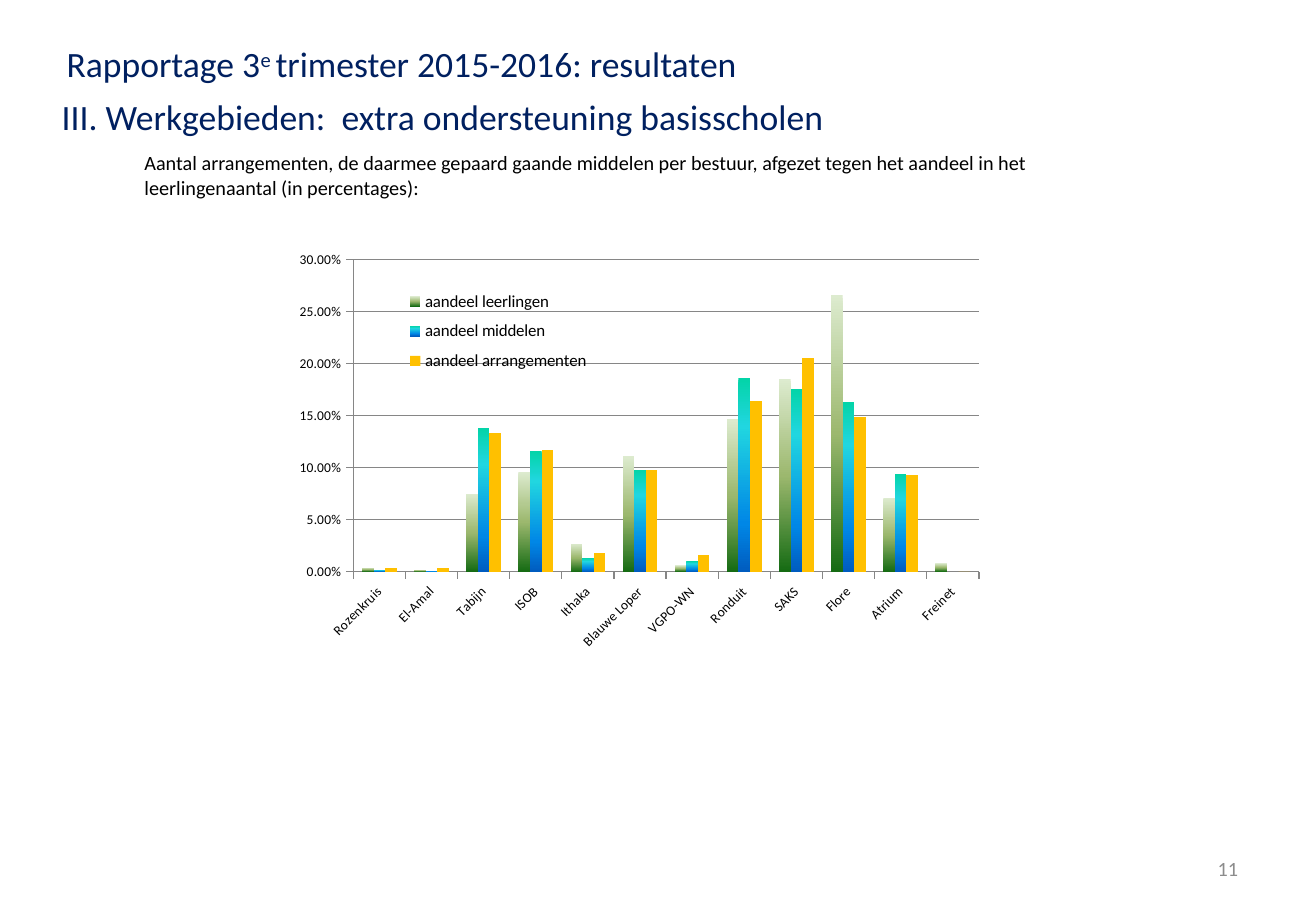
"""Build the slide on extra support per school board, with a clustered column chart."""
from lxml import etree
from pptx import Presentation
from pptx import util as u
from pptx.chart.data import CategoryChartData
from pptx.dml.color import RGBColor
from pptx.enum import chart as ch, text
from pptx.oxml import ns

NAVY = RGBColor(0x00, 0x20, 0x60)
BLACK = RGBColor(0x00, 0x00, 0x00)
GREY = RGBColor(0x8C, 0x8C, 0x8C)
AXIS_GREY = RGBColor(0x86, 0x86, 0x86)
AMBER = RGBColor(0xFF, 0xC0, 0x00)
GREENS = [(0, RGBColor(0xDD, 0xEB, 0xCF)), (50, RGBColor(0x9C, 0xB8, 0x6E)),
          (100, RGBColor(0x15, 0x6B, 0x13))]
BLUES = [(0, RGBColor(0x03, 0xD4, 0xA8)), (25, RGBColor(0x21, 0xD6, 0xE0)),
         (75, RGBColor(0x00, 0x87, 0xE6)), (100, RGBColor(0x00, 0x5C, 0xBF))]
FONT = "Calibri"

LEFT, RIGHT = text.PP_ALIGN.LEFT, text.PP_ALIGN.RIGHT
TOP, MIDDLE = text.MSO_ANCHOR.TOP, text.MSO_ANCHOR.MIDDLE
TEXTS = [
    ((32.4, 21.6, 572.4, 33.1), 21.1, NAVY, LEFT, TOP,
     [("Rapportage 3", 0), ("e ", 30), ("trimester 2015-2016: resultaten", 0)]),
    ((29.5, 52.6, 672.5, 33.1), 21.1, NAVY, LEFT, TOP,
     [("III. Werkgebieden:  extra ondersteuning basisscholen", 0)]),
    ((78.5, 85.7, 601.2, 36), 12, BLACK, LEFT, TOP,
     [("Aantal arrangementen, de daarmee gepaard gaande middelen per bestuur, "
       "afgezet tegen het aandeel in het leerlingenaantal (in percentages):", 0)]),
    ((558.7, 500.4, 182.2, 28.8), 12, GREY, RIGHT, MIDDLE, [("11", 0)]),
]

BOARDS = ["Rozenkruis", "El-Amal", "Tabijn", "ISOB", "Ithaka", "Blauwe Loper",
          "VGPO-WN", "Ronduit", "SAKS", "Flore", "Atrium", "Freinet"]
SHARES = [
    ("aandeel leerlingen", GREENS, [0.004, 0.002, 0.075, 0.096, 0.027, 0.111,
                                    0.006, 0.147, 0.185, 0.266, 0.071, 0.008]),
    ("aandeel middelen", BLUES, [0.002, 0.001, 0.138, 0.116, 0.013, 0.098,
                                 0.01, 0.186, 0.176, 0.163, 0.094, 0]),
    ("aandeel arrangementen", AMBER, [0.004, 0.004, 0.133, 0.117, 0.018, 0.098,
                                      0.016, 0.164, 0.205, 0.149, 0.093, 0]),
]
CHART_AREA = (164.2, 141.1, 452.2, 257)
PLOT_LAYOUT = (0.1, 0.05, 0.82, 0.72)
LEGEND_LAYOUT = (0.13, 0.1, 0.32, 0.23)


def points(values):
    return [u.Pt(value) for value in values]


def style_font(font, size, color):
    font.name, font.size, font.color.rgb = FONT, u.Pt(size), color


def add_text(page, area, size, color, align, anchor, spans):
    frame = page.shapes.add_textbox(*points(area)).text_frame
    frame.word_wrap, frame.vertical_anchor = True, anchor
    para = frame.paragraphs[0]
    para.alignment = align
    for words, raised in spans:
        span = para.add_run()
        span.text = words
        style_font(span.font, size, color)
        if raised:
            span.font._element.set("baseline", str(raised * 1000))


def set_layout(parent, position, layout, inner=False):
    for old in parent.findall(ns.qn("c:layout")):
        parent.remove(old)
    node = etree.Element(ns.qn("c:layout"))
    manual = etree.SubElement(node, ns.qn("c:manualLayout"))
    settings = [("layoutTarget", "inner")] if inner else []
    settings += [("xMode", "edge"), ("yMode", "edge")] + list(zip("xywh", layout))
    for name, value in settings:
        etree.SubElement(manual, ns.qn(f"c:{name}"), val=str(value))
    parent.insert(position, node)


def fill_series(series, color):
    fill = series.format.fill
    if isinstance(color, RGBColor):
        fill.solid()
        fill.fore_color.rgb = color
        return
    fill.gradient()
    gradient = series.format._element.spPr.find(ns.qn("a:gradFill"))
    for child in list(gradient):
        gradient.remove(child)
    stops = etree.SubElement(gradient, ns.qn("a:gsLst"))
    for percent, shade in color:
        stop = etree.SubElement(stops, ns.qn("a:gs"), pos=str(percent * 1000))
        etree.SubElement(stop, ns.qn("a:srgbClr"), val=str(shade))
    etree.SubElement(gradient, ns.qn("a:lin"), ang=str(90 * 60000), scaled="0")


def style_line(line):
    line.color.rgb, line.width = AXIS_GREY, u.Pt(0.75)


def add_share_chart(page):
    data = CategoryChartData(number_format="0.00%")
    data.categories = BOARDS
    for name, _, values in SHARES:
        data.add_series(name, values)
    chart = page.shapes.add_chart(
        ch.XL_CHART_TYPE.COLUMN_CLUSTERED, *points(CHART_AREA), data).chart
    chart.has_title = False
    style_font(chart.font, 10, BLACK)

    plot = chart.plots[0]
    plot.gap_width, plot.overlap, plot.vary_by_categories = 150, 0, False
    for series, (_, color, _) in zip(plot.series, SHARES):
        series.invert_if_negative = False
        fill_series(series, color)

    for axis in (chart.category_axis, chart.value_axis):
        axis.major_tick_mark = ch.XL_TICK_MARK.OUTSIDE
        axis.minor_tick_mark = ch.XL_TICK_MARK.NONE
        style_line(axis.format.line)
        style_font(axis.tick_labels.font, 8, BLACK)
    chart.category_axis._element.txPr.bodyPr.set("rot", str(-45 * 60000))
    scale = chart.value_axis
    scale.minimum_scale, scale.maximum_scale, scale.major_unit = 0, 0.3, 0.05
    scale.tick_labels.number_format = "0.00%"
    scale.tick_labels.number_format_is_linked = False
    scale.has_major_gridlines = True
    style_line(scale.major_gridlines.format.line)

    chart.has_legend = True
    legend = chart.legend
    legend.position = ch.XL_LEGEND_POSITION.RIGHT
    legend.include_in_layout = False
    style_font(legend.font, 10, BLACK)
    set_layout(legend._element, 1, LEGEND_LAYOUT)
    set_layout(chart._chartSpace.chart.plotArea, 0, PLOT_LAYOUT, inner=True)


def main():
    deck = Presentation()
    deck.slide_width, deck.slide_height = points((780, 540))
    page = deck.slides.add_slide(deck.slide_layouts[6])
    for item in TEXTS:
        add_text(page, *item)
    add_share_chart(page)
    deck.save("out.pptx")


if __name__ == "__main__":
    main()
